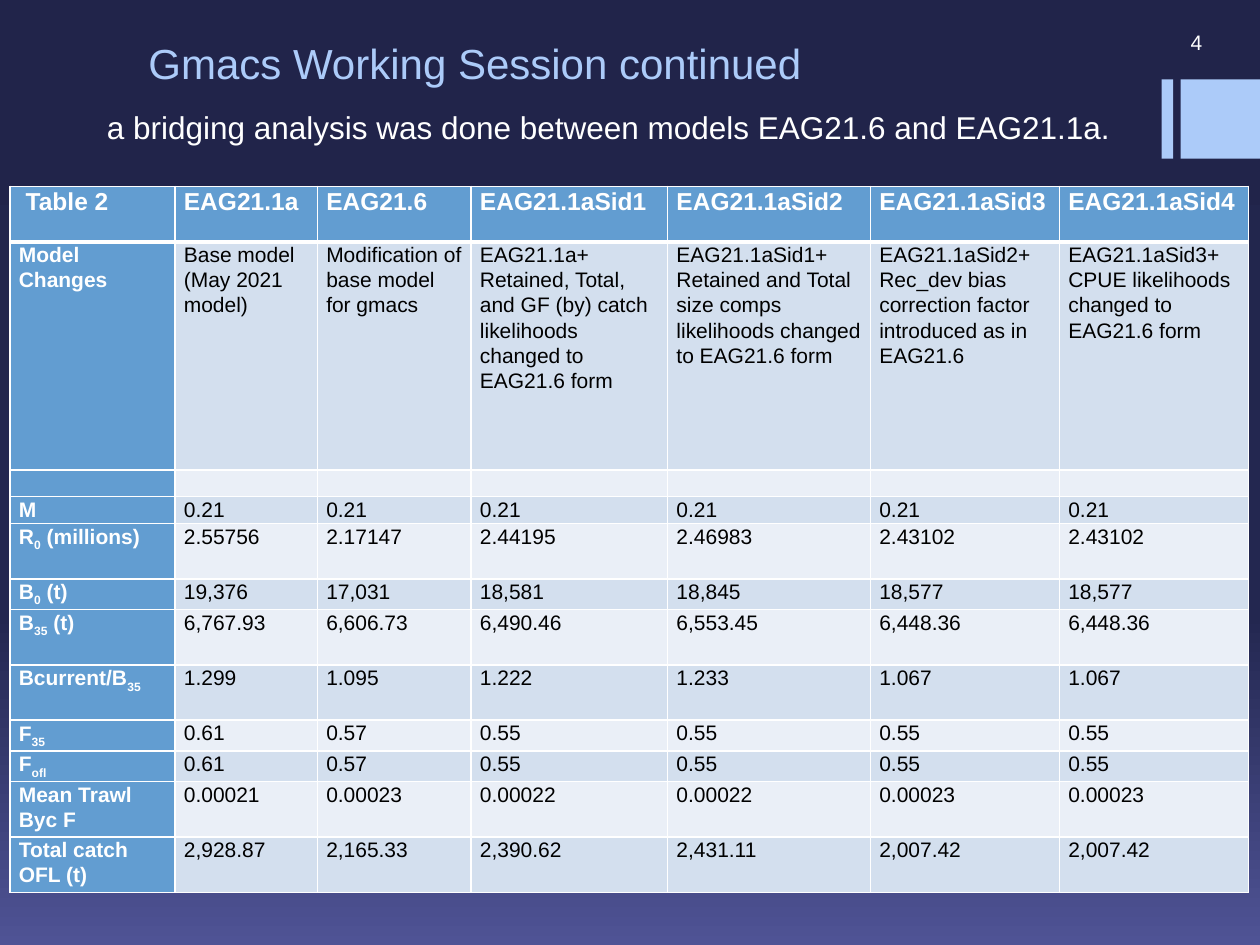
from copy import deepcopy
from dataclasses import dataclass

from lxml import etree
from pptx import Presentation
from pptx.dml.color import RGBColor
from pptx.enum.shapes import MSO_SHAPE
from pptx.enum.text import MSO_ANCHOR, PP_ALIGN
from pptx.oxml.ns import qn
from pptx.util import Inches, Pt

RECTANGLE = MSO_SHAPE.RECTANGLE
TOP, MIDDLE, BOTTOM = MSO_ANCHOR.TOP, MSO_ANCHOR.MIDDLE, MSO_ANCHOR.BOTTOM
LEFT, RIGHT = PP_ALIGN.LEFT, PP_ALIGN.RIGHT


@dataclass(frozen=True)
class Theme:
    font: str = "Arial"
    background: tuple = ((0, "21244A"), (0.65, "232750"), (1, "4F5395"))
    accent: str = "ACCBF9"
    light: str = "FFFFFF"
    dark: str = "000000"
    header_fill: str = "629DD1"
    band_fills: tuple = ("D3DFEE", "EAEFF7")
    title_size: int = 24
    subtitle_size: int = 18
    header_size: int = 14
    body_size: int = 12


THEME = Theme()

COLUMN_WIDTHS = (1.31, 1.13, 1.22, 1.56, 1.61, 1.5, 1.5)
SHORT, TALL = 0.21, 0.44

# Row height and cell texts; subscripts stand between tildes.
MODEL_ROWS = (
    (TALL, (" Table 2", "EAG21.1a", "EAG21.6", "EAG21.1aSid1", "EAG21.1aSid2",
            "EAG21.1aSid3", "EAG21.1aSid4")),
    (1.81, ("Model Changes",
            "Base model (May 2021 model)",
            "Modification of base model for gmacs",
            "EAG21.1a+ Retained, Total, and GF (by) catch likelihoods changed to EAG21.6 form",
            "EAG21.1aSid1+\nRetained and Total size comps likelihoods changed to EAG21.6 form",
            "EAG21.1aSid2+\nRec_dev bias correction factor introduced as in EAG21.6",
            "EAG21.1aSid3+\nCPUE likelihoods changed to EAG21.6 form")),
    (SHORT, ("",) * 7),
    (SHORT, ("M",) + ("0.21",) * 6),
    (TALL, ("R~0~ (millions)", "2.55756", "2.17147", "2.44195", "2.46983", "2.43102", "2.43102")),
    (SHORT, ("B~0~ (t)", "19,376", "17,031", "18,581", "18,845", "18,577", "18,577")),
    (TALL, ("B~35~ (t)", "6,767.93", "6,606.73", "6,490.46", "6,553.45", "6,448.36", "6,448.36")),
    (TALL, ("Bcurrent/B~35~", "1.299", "1.095", "1.222", "1.233", "1.067", "1.067")),
    (SHORT, ("F~35~", "0.61", "0.57") + ("0.55",) * 4),
    (SHORT, ("F~ofl~", "0.61", "0.57") + ("0.55",) * 4),
    (TALL, ("Mean Trawl Byc F", "0.00021", "0.00023", "0.00022", "0.00022", "0.00023", "0.00023")),
    (TALL, ("Total catch OFL (t)", "2,928.87", "2,165.33", "2,390.62", "2,431.11",
            "2,007.42", "2,007.42")),
)


def rgb(color):
    return RGBColor.from_string(color)


def set_background(s):
    fill = s.background.fill
    fill.gradient()
    fill.gradient_angle = 270
    last = fill.gradient_stops[1]._gs
    last.addprevious(deepcopy(last))
    for stop, (position, color) in zip(fill.gradient_stops, THEME.background):
        stop.position = position
        stop.color.rgb = rgb(color)


def add_accent_bar(s, left, width):
    sp = s.shapes.add_shape(RECTANGLE, Inches(left), Inches(0.63), Inches(width), Inches(0.63))
    sp.shadow.inherit = False
    sp.fill.solid()
    sp.fill.fore_color.rgb = rgb(THEME.accent)
    sp.line.fill.background()


def format_run(r, size, color, bold=False):
    r.font.name = THEME.font
    r.font.size = Pt(size)
    r.font.bold = bold
    r.font.color.rgb = rgb(color)


def add_text(s, text, box, size, color, anchor=TOP, align=LEFT):
    sp = s.shapes.add_textbox(*map(Inches, box))
    tf = sp.text_frame
    tf.word_wrap = True
    tf.vertical_anchor = anchor
    tf.text = text
    p = tf.paragraphs[0]
    p.alignment = align
    format_run(p.runs[0], size, color)


def add_border(cell, side, width):
    tcPr = cell._tc.get_or_add_tcPr()
    ln = etree.SubElement(tcPr, qn(f"a:{side}"), w=str(Pt(width)))
    fill = etree.SubElement(ln, qn("a:solidFill"))
    etree.SubElement(fill, qn("a:srgbClr"), val=THEME.light)


def write_paragraph(p, text, size, color, bold):
    """Write text with its subscripts, or keep the type size of an empty line."""
    p.line_spacing = 1.07
    if not text:
        etree.SubElement(p._p, qn("a:endParaRPr"), sz=str(size * 100))
        return
    for i, part in enumerate(text.split("~")):
        if part:
            r = p.add_run()
            r.text = part
            format_run(r, size, color, bold)
            if i % 2:
                r.font._element.set("baseline", "-25000")


def fill_cell(cell, text, row, column):
    heading = row == 0 or column == 0
    size = THEME.header_size if row == 0 else THEME.body_size
    color = THEME.light if heading else THEME.dark
    cell.margin_left = cell.margin_right = Inches(0.07)
    cell.margin_top = cell.margin_bottom = 0
    tf = cell.text_frame
    for i, line in enumerate(text.split("\n")):
        p = tf.add_paragraph() if i else tf.paragraphs[0]
        write_paragraph(p, line, size, color, heading)
    for side in ("lnL", "lnR", "lnT", "lnB"):
        at_header_edge = (row, side) in ((0, "lnB"), (1, "lnT"))
        add_border(cell, side, 3 if at_header_edge else 1)
    cell.fill.solid()
    cell.fill.fore_color.rgb = rgb(THEME.header_fill if heading else THEME.band_fills[(row - 1) % 2])


def add_model_table(s):
    height = sum(h for h, _ in MODEL_ROWS)
    table = s.shapes.add_table(len(MODEL_ROWS), len(COLUMN_WIDTHS), Inches(0.08), Inches(1.48),
                               Inches(sum(COLUMN_WIDTHS)), Inches(height)).table
    for column, width in zip(table.columns, COLUMN_WIDTHS):
        column.width = Inches(width)
    for i, (row_height, texts) in enumerate(MODEL_ROWS):
        table.rows[i].height = Inches(row_height)
        for j, text in enumerate(texts):
            fill_cell(table.cell(i, j), text, i, j)


def main():
    prs = Presentation()
    prs.slide_width, prs.slide_height = Inches(10), Inches(7.5)
    s = prs.slides.add_slide(prs.slide_layouts[6])
    set_background(s)
    add_accent_bar(s, 9.22, 0.09)
    add_accent_bar(s, 9.37, 0.63)
    add_text(s, "Gmacs Working Session continued", (1.08, 0.14, 8, 0.61),
             THEME.title_size, THEME.accent, anchor=BOTTOM)
    add_text(s, "4", (8.61, 0.17, 1.03, 0.33), THEME.body_size, THEME.light, MIDDLE, RIGHT)
    add_text(s, "a bridging analysis was done between models EAG21.6 and EAG21.1a.",
             (0.75, 0.81, 8.5, 0.4), THEME.subtitle_size, THEME.light)
    add_model_table(s)
    prs.save("out.pptx")


if __name__ == "__main__":
    main()
